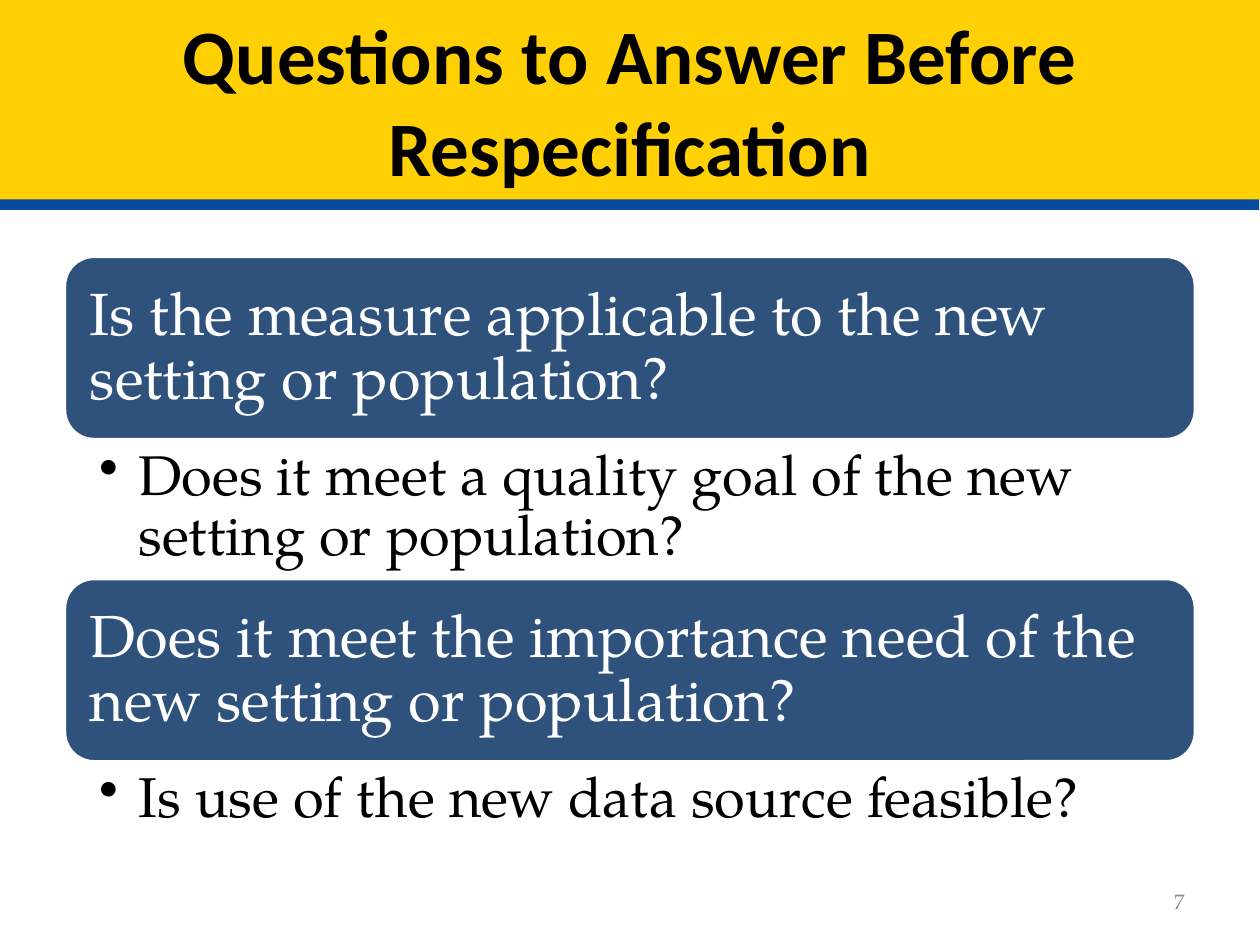
from dataclasses import dataclass

import pptx
import pptx.dml.color
import pptx.enum.shapes
import pptx.enum.text
import pptx.oxml
import pptx.oxml.ns
import pptx.util

Pt = pptx.util.Pt
RGBColor = pptx.dml.color.RGBColor
SHAPE = pptx.enum.shapes.MSO_SHAPE
ALIGN = pptx.enum.text.PP_ALIGN
ANCHOR = pptx.enum.text.MSO_ANCHOR

YELLOW = RGBColor(0xFF, 0xD0, 0x04)
NAVY = RGBColor(0x2F, 0x52, 0x7D)
WHITE = RGBColor(0xFF, 0xFF, 0xFF)
BLACK = RGBColor(0, 0, 0)
GRAY = RGBColor(0x8C, 0x8C, 0x8C)
BODY_FONT = "TeX Gyre Pagella"

LEFT, TOP, WIDTH = 36, 145.6, 648
BOX_HEIGHT = 106.5


@dataclass
class Question:
    heading: str
    bullet: str
    bullet_height: float


QUESTIONS = [
    Question("Is the measure applicable to the new setting or population?",
             "Does it meet a quality goal of the new setting or population?", 77.6),
    Question("Does it meet the importance need of the new setting or population?",
             "Is use of the new data source feasible?", 44.6),
]


def set_text(sp, text: str, font: dict, color: RGBColor, para: dict,
             anchor, insets: tuple):
    """Fill a shape with one formatted paragraph and return it."""
    tf = sp.text_frame
    tf.word_wrap = True
    tf.vertical_anchor = anchor
    for side, inset in zip(("left", "top", "right", "bottom"), insets):
        setattr(tf, f"margin_{side}", Pt(inset))
    p = tf.paragraphs[0]
    for name, value in para.items():
        setattr(p, name, value)
    r = p.add_run()
    r.text = text
    for name, value in font.items():
        setattr(r.font, name, value)
    r.font.color.rgb = color
    return p


def add_block(s, kind, left: float, top: float, width: float, height: float,
              fill: RGBColor):
    sp = s.shapes.add_shape(kind, Pt(left), Pt(top), Pt(width), Pt(height))
    sp.shadow.inherit = False
    sp.fill.solid()
    sp.fill.fore_color.rgb = fill
    sp.line.fill.background()
    return sp


def add_heading(s, text: str, top: float) -> None:
    sp = add_block(s, SHAPE.ROUNDED_RECTANGLE, LEFT, top, WIDTH, BOX_HEIGHT, NAVY)
    sp.line.color.rgb = WHITE
    sp.line.width = Pt(3.78)
    set_text(sp, text, {"name": BODY_FONT, "size": Pt(34)}, WHITE,
             {"alignment": ALIGN.LEFT, "line_spacing": 0.9},
             ANCHOR.MIDDLE, (10.2, 10.2, 10.2, 10.2))


def add_bullet(s, text: str, top: float, height: float) -> None:
    sp = s.shapes.add_textbox(Pt(LEFT), Pt(top), Pt(WIDTH), Pt(height))
    p = set_text(sp, text, {"name": BODY_FONT, "size": Pt(32)}, BLACK,
                 {"line_spacing": 0.9}, ANCHOR.TOP, (20.6, 3.2, 18, 3.2))
    pPr = p._p.get_or_add_pPr()
    pPr.set("marL", str(Pt(22.5)))
    pPr.set("indent", str(-Pt(22.5)))
    bullet = pptx.oxml.parse_xml(
        f'<a:buChar {pptx.oxml.ns.nsdecls("a")} char="•"/>')
    pPr.append(bullet)


def add_title(s, text: str) -> None:
    sp = add_block(s, SHAPE.RECTANGLE, 0, 0, 720, 114, YELLOW)
    set_text(sp, text, {"name": "Calibri", "size": Pt(44), "bold": True}, BLACK,
             {"alignment": ALIGN.CENTER}, ANCHOR.MIDDLE, (7.2, 3.6, 7.2, 3.6))
    # Hard blue shadow forming the stripe below the band
    effects = sp._element.spPr.find(pptx.oxml.ns.qn("a:effectLst"))
    effects.append(pptx.oxml.parse_xml(
        f'<a:outerShdw {pptx.oxml.ns.nsdecls("a")} dist="{Pt(6)}" '
        f'dir="{94 * 60000}" algn="t" rotWithShape="0">'
        '<a:srgbClr val="084A9C"/></a:outerShdw>'))


def main() -> None:
    prs = pptx.Presentation()
    prs.slide_width, prs.slide_height = Pt(720), Pt(540)
    s = prs.slides.add_slide(prs.slide_layouts[6])

    # Page number
    sp = s.shapes.add_textbox(Pt(516), Pt(500.5), Pt(168), Pt(28.8))
    set_text(sp, "7", {"name": BODY_FONT, "size": Pt(12)}, GRAY,
             {"alignment": ALIGN.RIGHT}, ANCHOR.MIDDLE, (7.2, 3.6, 7.2, 3.6))

    # Stacked questions, each followed by its bullet
    top = TOP
    for question in QUESTIONS:
        add_heading(s, question.heading, top)
        top += BOX_HEIGHT
        add_bullet(s, question.bullet, top, question.bullet_height)
        top += question.bullet_height

    # Title band
    add_title(s, "Questions to Answer Before Respecification")

    prs.save("out.pptx")


if __name__ == "__main__":
    main()
